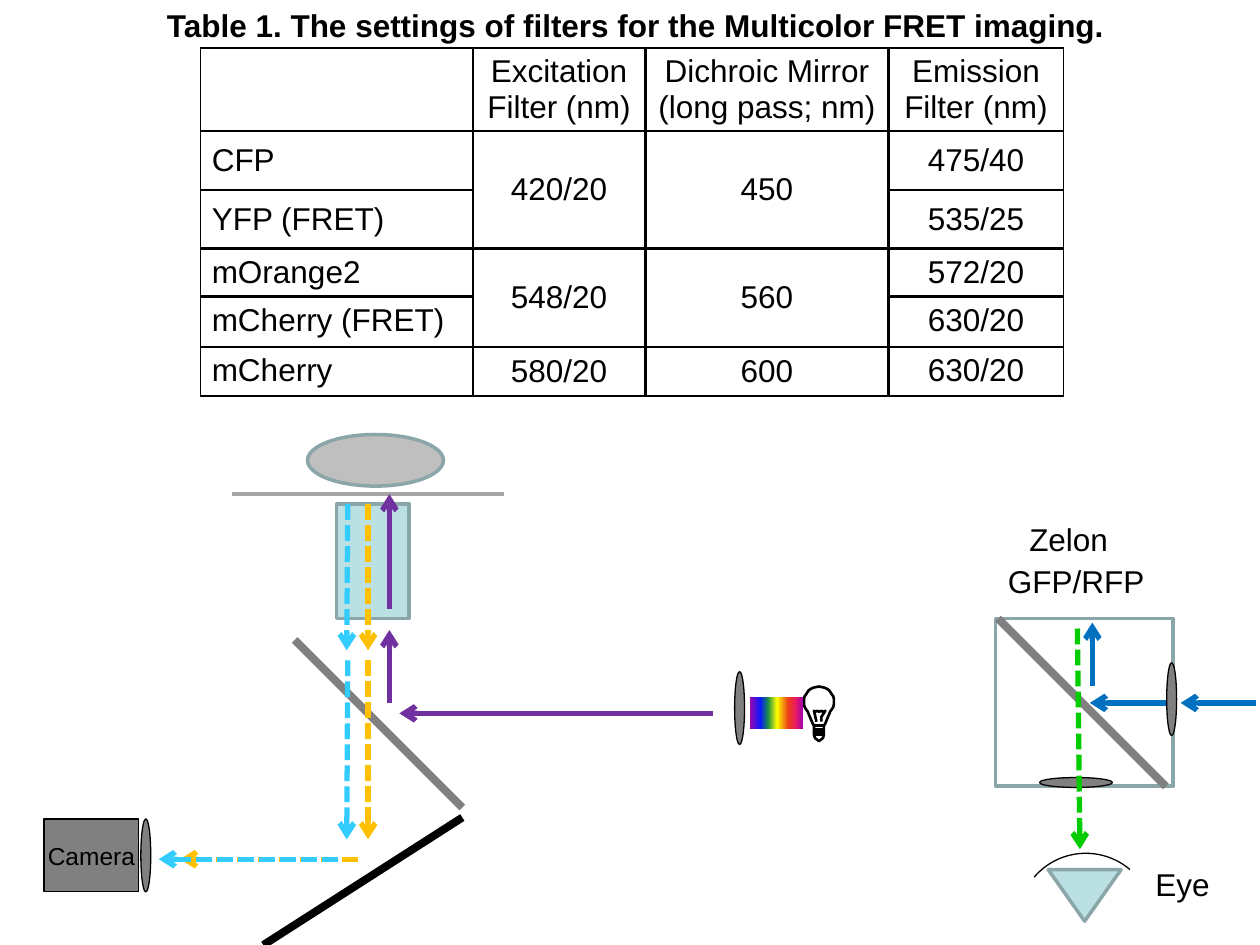
import math
from lxml import etree
from pptx import Presentation
from pptx.dml.color import RGBColor
from pptx.enum.dml import MSO_LINE
from pptx.enum.shapes import MSO_CONNECTOR, MSO_SHAPE
from pptx.enum.text import MSO_ANCHOR, MSO_AUTO_SIZE, PP_ALIGN
from pptx.oxml.ns import qn
from pptx.util import Cm, Pt

RECT, OVAL, ARC = MSO_SHAPE.RECTANGLE, MSO_SHAPE.OVAL, MSO_SHAPE.ARC
TRIANGLE = MSO_SHAPE.ISOSCELES_TRIANGLE
LEFT, CENTER = PP_ALIGN.LEFT, PP_ALIGN.CENTER
TOP, MIDDLE = MSO_ANCHOR.TOP, MSO_ANCHOR.MIDDLE

COLORS = {
    "black": "000000", "gray": "808080", "light gray": "BFBFBF",
    "stage": "A6A6A6", "glass": "BBE0E3", "glass edge": "8AA6A8",
    "purple": "7030A0", "cyan": "33CCFF", "orange": "FFC000",
    "blue": "0070C0", "green": "00CC00",
}
SPECTRUM = [(0, "A603AB"), (21, "0819FB"), (35, "1A8D48"), (52, "FFFF00"),
            (73, "EE3F17"), (88, "E81766"), (100, "A603AB")]

# Content; all places below are in inches
TITLE = "Table 1. The settings of filters for the Multicolor FRET imaging."
ROWS = [
    ["", "Excitation Filter (nm)", "Dichroic Mirror (long pass; nm)", "Emission Filter (nm)"],
    ["CFP", "420/20", "450", "475/40"],
    ["YFP (FRET)", "", "", "535/25"],
    ["mOrange2", "548/20", "560", "572/20"],
    ["mCherry (FRET)", "", "", "630/20"],
    ["mCherry", "580/20", "600", "630/20"],
]
COLUMN_WIDTHS = [2.16, 1.37, 1.93, 1.39]
ROW_HEIGHTS = [0.65, 0.47, 0.46, 0.38, 0.4, 0.39]
MERGED_ROWS = [(1, 2), (3, 4)]
MIDDLE_ROWS = (1, 2)

# kind, left, top, width, height, fill, line colour, line width, rotation
SHAPES = [
    (RECT, 2.67, 4, 0.58, 0.91, "glass", "glass edge", 2, 0),
    (OVAL, 2.44, 3.45, 1.08, 0.41, "light gray", "glass edge", 2, 0),
    (RECT, 7.9, 4.91, 1.41, 1.33, None, "glass edge", 2, 0),
    (TRIANGLE, 8.32, 6.9, 0.58, 0.41, "glass", "glass edge", 2, 180),
    (ARC, 8.08, 6.77, 1.08, 1.08, None, "black", 0.75, 310.5),
]
# Thin filter lenses: left, top, rotation
FILTERS = [(5.83, 5.33, 0), (1.12, 6.5, 0), (9.26, 5.26, 0), (8.5, 5.92, 90)]

# start x, start y, end x, end y, colour, width
PLATES = [
    (2.34, 5.08, 3.67, 6.41, "gray", 4.5),
    (1.84, 3.92, 4, 3.92, "stage", 2.25),
    (2.09, 7.5, 3.67, 6.49, "black", 4.5),
    (7.92, 4.91, 9.25, 6.24, "gray", 4.5),
]
# start x, start y, end x, end y, colour, dashed
BEAMS = [
    (5.66, 5.66, 3.17, 5.66, "purple", False),
    (3.09, 5.58, 3.09, 5, "purple", False),
    (3.09, 4.83, 3.09, 3.92, "purple", False),
    (2.92, 4, 2.92, 5.16, "orange", True),
    (2.76, 4, 2.75, 5.16, "cyan", True),
    (2.92, 5.24, 2.92, 6.66, "orange", True),
    (2.76, 5.24, 2.75, 6.66, "cyan", True),
    (2.84, 6.82, 1.43, 6.82, "orange", True),
    (2.68, 6.82, 1.26, 6.82, "cyan", True),
    (9.97, 5.58, 9.37, 5.58, "blue", False),
    (9.25, 5.58, 8.65, 5.58, "blue", False),
    (8.67, 5.44, 8.67, 4.94, "blue", False),
    (8.55, 4.99, 8.57, 6.74, "green", True),
]
LABELS = [("GFP/RFP", 7.9, 4.41, 1.3), ("Zelon", 8.07, 4.08, 0.85), ("Eye", 9.07, 6.82, 0.64)]

# Light bulb: neck of the right half, then filament and screw thread
BULB_X, BULB_Y = 6.5, 5.57
BULB_NECK = [(6.55, 5.74), (6.54, 5.76), (6.54, 5.83), (6.53, 5.86), (6.5, 5.88)]
BULB_INSIDE = [
    [(6.48, 5.73), (6.46, 5.64), (6.47, 5.65), (6.49, 5.64), (6.5, 5.65), (6.52, 5.64),
     (6.53, 5.65), (6.55, 5.64), (6.52, 5.69), (6.52, 5.73)],
    [(6.46, 5.76), (6.54, 5.76), (6.54, 5.79), (6.46, 5.79), (6.46, 5.81),
     (6.54, 5.81), (6.54, 5.83), (6.46, 5.83)],
]


def inches(value):
    return Cm(round(value * 2.54, 2))


def rgb(name):
    return RGBColor.from_string(COLORS[name])


def write(frame, text, size=18, bold=False, align=LEFT):
    para = frame.paragraphs[0]
    para.alignment = align
    span = para.add_run()
    span.text = text
    span.font.name, span.font.size, span.font.bold = "Arial", Pt(size), bold
    span.font.color.rgb = rgb("black")


def paint(shape, fill=None, line=None, width=0.75):
    shape.shadow.inherit = False
    if fill:
        shape.fill.solid()
        shape.fill.fore_color.rgb = rgb(fill)
    else:
        shape.fill.background()
    if line:
        shape.line.color.rgb = rgb(line)
        shape.line.width = Pt(width)
    else:
        shape.line.fill.background()


def add_shape(page, kind, left, top, width, height, fill=None, line=None, weight=0.75, rotation=0):
    shape = page.shapes.add_shape(kind, *map(inches, (left, top, width, height)))
    shape.rotation = rotation
    paint(shape, fill, line, weight)
    return shape


def add_line(page, x1, y1, x2, y2, color, width=3, dashed=False, arrow=False):
    line = page.shapes.add_connector(MSO_CONNECTOR.STRAIGHT, *map(inches, (x1, y1, x2, y2)))
    line.line.color.rgb = rgb(color)
    line.line.width = Pt(width)
    if dashed:
        line.line.dash_style = MSO_LINE.SQUARE_DOT
    properties = line._element.spPr
    if arrow:
        etree.SubElement(properties.find(qn("a:ln")), qn("a:tailEnd"), type="arrow")
    etree.SubElement(properties, qn("a:effectLst"))


def add_borders(cell, widths):
    properties = cell._tc.get_or_add_tcPr()
    for side, width in zip("LRTB", widths):
        border = etree.SubElement(properties, qn("a:ln" + side), w=str(Pt(width)))
        solid = etree.SubElement(border, qn("a:solidFill"))
        etree.SubElement(solid, qn("a:srgbClr"), val=COLORS["black"])


def add_filter_table(page):
    table = page.shapes.add_table(len(ROWS), len(COLUMN_WIDTHS), *map(
        inches, (1.59, 0.38, sum(COLUMN_WIDTHS), sum(ROW_HEIGHTS)))).table
    table.first_row = table.horz_banding = False
    for column, width in zip(table.columns, COLUMN_WIDTHS):
        column.width = inches(width)
    for row, height in zip(table.rows, ROW_HEIGHTS):
        row.height = inches(height)
    for first, last in MERGED_ROWS:
        for c in (1, 2):
            table.cell(first, c).merge(table.cell(last, c))
    for r, texts in enumerate(ROWS):
        for c, text in enumerate(texts):
            cell = table.cell(r, c)
            outer = (c == 0, c == len(texts) - 1, r == 0, r == len(ROWS) - 1)
            add_borders(cell, [1 if edge else 1.5 for edge in outer])
            cell.fill.background()
            cell.margin_left = cell.margin_right = inches(0.09)
            centered = r in MIDDLE_ROWS or (r > 0 and c in (1, 2))
            cell.vertical_anchor = MIDDLE if centered else TOP
            if text:
                write(cell.text_frame, text, align=CENTER if c else LEFT)


def add_bulb(page):
    turns = [math.radians(angle) for angle in range(-90, 41, 10)]
    right = [(BULB_X + 0.12 * math.cos(t), BULB_Y + 0.12 * math.sin(t)) for t in turns] + BULB_NECK
    left = [(2 * BULB_X - x, y) for x, y in reversed(right[1:-1])]
    contours = [(right + left, True)] + [(points, False) for points in BULB_INSIDE]
    builder = page.shapes.build_freeform(*map(inches, right[0]))
    for points, closed in contours:
        spots = [tuple(map(inches, point)) for point in points]
        if not closed:
            builder.move_to(*spots[0])
        builder.add_line_segments(spots[1:], close=closed)
    paint(builder.convert_to_shape(), line="black", width=1.5)


def add_spectrum(page):
    box = add_shape(page, RECT, 5.95, 5.53, 0.42, 0.25)
    box.fill.gradient()
    box.fill.gradient_angle = 0
    stops = box._element.spPr.find(qn("a:gradFill")).find(qn("a:gsLst"))
    for stop in list(stops):
        stops.remove(stop)
    for percent, color in SPECTRUM:
        stop = etree.SubElement(stops, qn("a:gs"), pos=str(percent * 1000))
        etree.SubElement(stop, qn("a:srgbClr"), val=color)


def main():
    deck = Presentation()
    deck.slide_width, deck.slide_height = inches(10), inches(7.5)
    page = deck.slides.add_slide(deck.slide_layouts[5])

    # Title and table
    title = page.shapes.title
    title.left, title.top, title.width, title.height = map(inches, (1.18, 0, 7.73, 0.4))
    frame = title.text_frame
    frame.word_wrap, frame.auto_size, frame.vertical_anchor = False, MSO_AUTO_SIZE.NONE, TOP
    write(frame, TITLE, bold=True, align=CENTER)
    add_filter_table(page)

    # Optical parts and lamp
    for part in SHAPES:
        add_shape(page, *part)
    add_bulb(page)
    add_spectrum(page)
    camera = add_shape(page, RECT, 0.35, 6.5, 0.75, 0.58, "gray", "black")
    camera.text_frame.word_wrap = False
    camera.text_frame.vertical_anchor = MIDDLE
    write(camera.text_frame, "Camera", size=14, align=CENTER)
    for left, top, rotation in FILTERS:
        add_shape(page, OVAL, left, top, 0.08, 0.58, "gray", "black", rotation=rotation)

    # Mirrors, stage and light beams
    for plate in PLATES:
        add_line(page, *plate)
    for *ends, color, dashed in BEAMS:
        add_line(page, *ends, color, dashed=dashed, arrow=True)

    # Labels
    for text, left, top, width in LABELS:
        box = page.shapes.add_textbox(*map(inches, (left, top, width, 0.4)))
        box.text_frame.word_wrap = False
        write(box.text_frame, text)

    deck.save("out.pptx")


if __name__ == "__main__":
    main()
